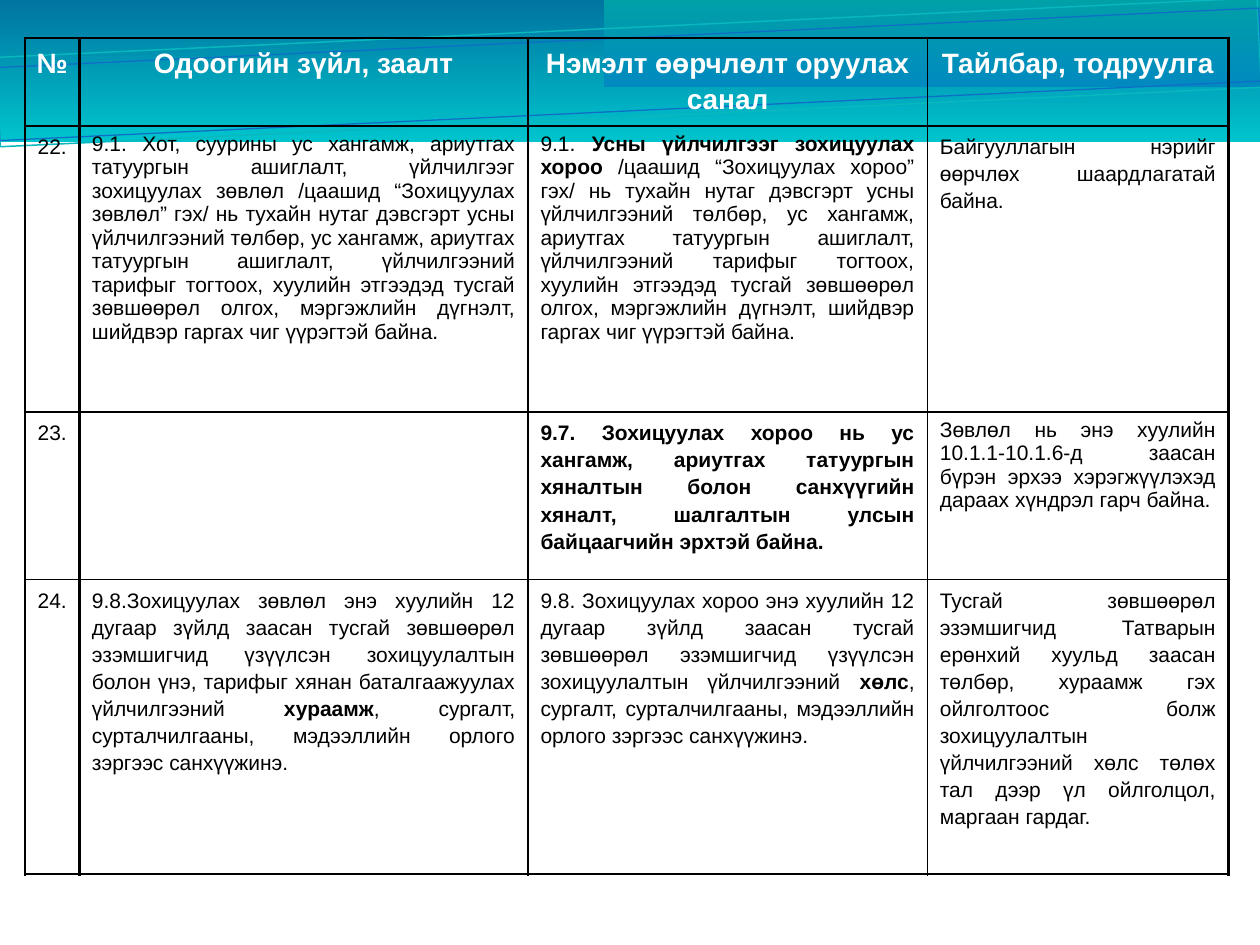
from dataclasses import dataclass

from lxml import etree
from pptx import Presentation, util as u
from pptx.dml.color import RGBColor
from pptx.enum import shapes, text
from pptx.oxml import ns

WHITE = RGBColor(0xFF, 0xFF, 0xFF)
BLACK = RGBColor(0x00, 0x00, 0x00)
DEEP_TEAL = RGBColor(0x00, 0x74, 0xA0)
AQUA = RGBColor(0x00, 0xC4, 0xCD)
BLUE = RGBColor(0x00, 0x8A, 0xBF)
TEAL = RGBColor(0x00, 0xA0, 0xA8)
LINE_AQUA = RGBColor(0x09, 0xB7, 0xBF)
LINE_BLUE = RGBColor(0x0F, 0x6F, 0xC6)

FONT = "Arial"
NO_STYLE = "{2D5ABB26-0587-4C30-8999-92F81FD0307C}"
THICK, THIN = 1.5, 1.0
COLUMNS = (0.43, 3.56, 3.17, 2.39)
ROWS = (0.7, 2.27, 1.33, 2.34)
TABLE_LEFT, TABLE_TOP = 0.2, 0.3


@dataclass(frozen=True)
class Band:
    box: tuple[float, float, float, float]
    start: RGBColor
    end: RGBColor
    angle: int


@dataclass(frozen=True)
class Outline:
    box: tuple[float, float, float, float]
    color: RGBColor
    width: float


@dataclass(frozen=True)
class Entry:
    """Cell wording; parts between asterisks are bold."""
    words: str
    spacing: float = 1.15


BANDS = (
    Band((-0.01, -0.01, 10.02, 1.14), DEEP_TEAL, AQUA, 270),
    Band((4.79, -0.01, 5.21, 0.7), BLUE, TEAL, 90),
)
OUTLINES = (
    Outline((-0.02, 0.22, 10.02, 0.71), LINE_AQUA, 0.85),
    Outline((-0.02, 0.3, 10.03, 0.58), LINE_BLUE, 0.75),
)
ENTRIES = (
    (
        Entry("*№*"),
        Entry("*Одоогийн зүйл, заалт*"),
        Entry("*Нэмэлт өөрчлөлт оруулах санал*"),
        Entry("*Тайлбар, тодруулга*"),
    ),
    (
        Entry("22."),
        Entry("9.1. Хот, суурины ус хангамж, ариутгах татуургын ашиглалт, үйлчилгээг "
              "зохицуулах зөвлөл /цаашид “Зохицуулах зөвлөл” гэх/ нь тухайн нутаг дэвсгэрт "
              "усны үйлчилгээний төлбөр, ус хангамж, ариутгах татуургын ашиглалт, "
              "үйлчилгээний тарифыг тогтоох, хуулийн этгээдэд тусгай зөвшөөрөл олгох, "
              "мэргэжлийн дүгнэлт, шийдвэр гаргах чиг үүрэгтэй байна.", 1),
        Entry("9.1.* Усны үйлчилгээг зохицуулах хороо* /цаашид “Зохицуулах хороо” гэх/ нь "
              "тухайн нутаг дэвсгэрт усны үйлчилгээний төлбөр, ус хангамж, ариутгах "
              "татуургын ашиглалт, үйлчилгээний тарифыг тогтоох, хуулийн этгээдэд тусгай "
              "зөвшөөрөл олгох, мэргэжлийн дүгнэлт, шийдвэр гаргах чиг үүрэгтэй байна.", 1),
        Entry("Байгууллагын нэрийг өөрчлөх шаардлагатай байна."),
    ),
    (
        Entry("23."),
        Entry(""),
        Entry("*9.7. Зохицуулах хороо нь ус хангамж, ариутгах татуургын хяналтын болон "
              "санхүүгийн хяналт, шалгалтын улсын байцаагчийн эрхтэй байна.*"),
        Entry("Зөвлөл нь энэ хуулийн 10.1.1-10.1.6-д заасан бүрэн эрхээ хэрэгжүүлэхэд "
              "дараах хүндрэл гарч байна.", 1),
    ),
    (
        Entry("24."),
        Entry("9.8.Зохицуулах зөвлөл энэ хуулийн 12 дугаар зүйлд заасан тусгай зөвшөөрөл "
              "эзэмшигчид үзүүлсэн зохицуулалтын болон үнэ, тарифыг хянан баталгаажуулах "
              "үйлчилгээний *хураамж*, сургалт, сурталчилгааны, мэдээллийн орлого зэргээс "
              "санхүүжинэ."),
        Entry("9.8. Зохицуулах хороо энэ хуулийн 12 дугаар зүйлд заасан тусгай зөвшөөрөл "
              "эзэмшигчид үзүүлсэн зохицуулалтын үйлчилгээний *хөлс*, сургалт, "
              "сурталчилгааны, мэдээллийн орлого зэргээс санхүүжинэ."),
        Entry("Тусгай зөвшөөрөл эзэмшигчид Татварын ерөнхий хуульд заасан төлбөр, хураамж "
              "гэх ойлголтоос болж зохицуулалтын үйлчилгээний хөлс төлөх тал дээр үл "
              "ойлголцол, маргаан гардаг."),
    ),
)


def add_rectangle(slide, box: tuple[float, float, float, float]):
    shape = slide.shapes.add_shape(
        shapes.MSO_SHAPE.RECTANGLE, *(u.Inches(length) for length in box))
    shape.shadow.inherit = False
    return shape


def draw_band(slide, band: Band) -> None:
    shape = add_rectangle(slide, band.box)
    shape.line.fill.background()
    shape.fill.gradient()
    shape.fill.gradient_angle = band.angle
    for stop, color, position in zip(shape.fill.gradient_stops, (band.start, band.end), (0, 1)):
        stop.color.rgb = color
        stop.position = position


def draw_outline(slide, outline: Outline) -> None:
    shape = add_rectangle(slide, outline.box)
    shape.rotation = 357.3
    shape.fill.background()
    shape.line.color.rgb = outline.color
    shape.line.width = u.Pt(outline.width)


def set_borders(cell, row: int, column: int) -> None:
    """Draw thick lines around the table and after the number column."""
    thick = {
        "lnL": column <= 1,
        "lnR": column in (0, len(COLUMNS) - 1),
        "lnT": row == 0,
        "lnB": row == len(ROWS) - 1,
    }
    properties = cell._tc.get_or_add_tcPr()
    for position, (side, is_thick) in enumerate(thick.items()):
        line = etree.Element(ns.qn(f"a:{side}"), w=str(u.Pt(THICK if is_thick else THIN)))
        fill = etree.SubElement(line, ns.qn("a:solidFill"))
        etree.SubElement(fill, ns.qn("a:srgbClr"), val=str(BLACK))
        properties.insert(position, line)


def fill_cell(cell, entry: Entry, row: int, column: int) -> None:
    is_header = row == 0
    cell.fill.background()
    if column == 0:
        cell.margin_left = cell.margin_right = u.Inches(0.05)
    set_borders(cell, row, column)
    paragraph = cell.text_frame.paragraphs[0]
    centred = is_header or column == 0
    paragraph.alignment = text.PP_ALIGN.CENTER if centred else text.PP_ALIGN.JUSTIFY
    paragraph.line_spacing = float(entry.spacing)
    paragraph.font.name = FONT
    paragraph.font.size = u.Pt(16 if is_header else 12)
    paragraph.font.color.rgb = WHITE if is_header else BLACK
    for index, part in enumerate(entry.words.split("*")):
        if part:
            run = paragraph.add_run()
            run.text = part
            run.font.bold = index % 2 == 1


def draw_table(slide) -> None:
    frame = slide.shapes.add_table(
        len(ROWS), len(COLUMNS), u.Inches(TABLE_LEFT), u.Inches(TABLE_TOP),
        u.Inches(sum(COLUMNS)), u.Inches(sum(ROWS)))
    table = frame.table
    table.first_row = table.horz_banding = False
    table._tbl.tblPr.find(ns.qn("a:tableStyleId")).text = NO_STYLE
    for column, width in zip(table.columns, COLUMNS):
        column.width = u.Inches(width)
    for row, height in zip(table.rows, ROWS):
        row.height = u.Inches(height)
    for row, entries in enumerate(ENTRIES):
        for column, entry in enumerate(entries):
            fill_cell(table.cell(row, column), entry, row, column)


def main() -> None:
    presentation = Presentation()
    presentation.slide_width, presentation.slide_height = u.Inches(10), u.Inches(7.5)
    slide = presentation.slides.add_slide(presentation.slide_layouts[6])
    for band in BANDS:
        draw_band(slide, band)
    for outline in OUTLINES:
        draw_outline(slide, outline)
    draw_table(slide)
    presentation.save("out.pptx")


if __name__ == "__main__":
    main()
